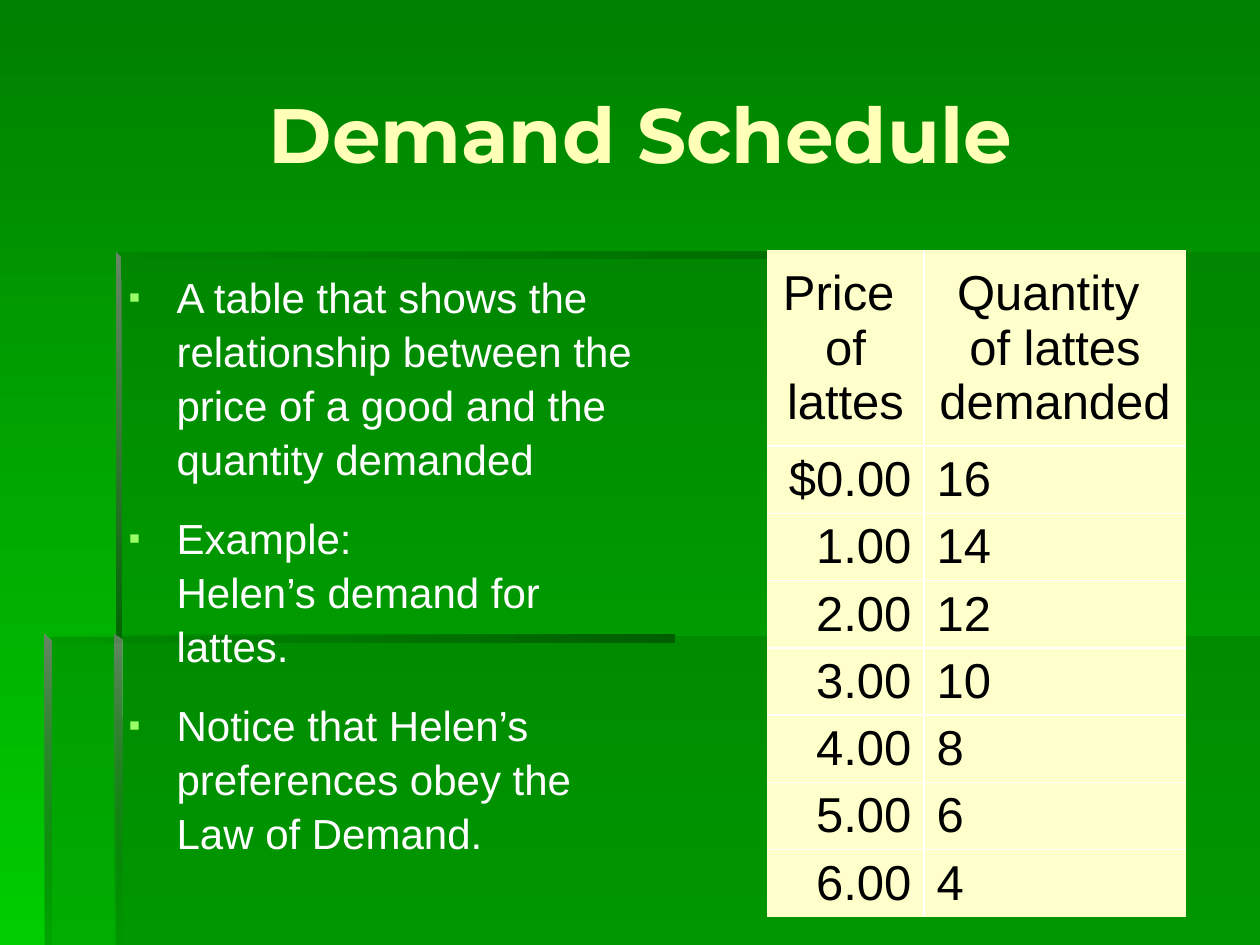
import pptx
import pptx.util
import pptx.dml.color
import pptx.enum.text
import pptx.oxml
import pptx.oxml.ns
import lxml.etree

THEME = {
    "background": ("008000", "00CC00"),
    "panel": "006600", "bar_end": "005E00", "edge": "668666",
    "title": "FFFFB7", "body": "FFFFFF", "bullet": "99FF66",
    "cell": "FFFFCC", "cell_text": "000000", "grid": "FFFFFF",
    "title_font": "Montserrat", "font": "Arial",
    "title_size": 44, "body_size": 24, "cell_size": 28,
}
PX = 914400 / 126
ALIGN = pptx.enum.text.PP_ALIGN
MIDDLE = pptx.enum.text.MSO_ANCHOR.MIDDLE
rgb = pptx.dml.color.RGBColor.from_string
qn = pptx.oxml.ns.qn


def paint_gradient(fill, colours, clockwise):
    fill.gradient()
    fill.gradient_angle = (360 - clockwise) % 360
    for stop, colour in zip(fill.gradient_stops, colours):
        stop.color.rgb = rgb(colour)


def style_font(font, name, size, colour, bold=False):
    values = {"name": name, "size": pptx.util.Pt(size), "bold": bold}
    for attribute, value in values.items():
        setattr(font, attribute, value)
    font.color.rgb = rgb(colour)


deck = pptx.Presentation()
deck.slide_width, deck.slide_height = pptx.util.Inches(10), pptx.util.Inches(7.5)
page = deck.slides.add_slide(deck.slide_layouts[1])
paint_gradient(page.background.fill, THEME["background"], 90)

# Translucent panels and shaded edges: outline, colours, opacities, angle
panel, edge, bar_end = THEME["panel"], THEME["edge"], THEME["bar_end"]
decorations = [
    ([(116, 636), (116, 945), (1260, 945), (1260, 636)], [panel], [30], 0),
    ([(118, 637), (45, 637), (45, 945), (1260, 945), (1260, 252), (118, 252)],
     [panel], [30], 0),
    ([(116, 252), (116, 259), (1123, 259), (1123, 252)],
     [panel, bar_end], [0, 100], 0),
    ([(116, 252), (116, 643), (122, 643), (121, 257)],
     [edge, panel], [100, 100], 90),
    ([(115, 945), (122, 945), (121, 640), (115, 635)],
     [edge, panel], [100, 0], 90),
    ([(44, 635), (44, 642), (674, 642), (674, 635)],
     [panel, bar_end], [0, 100], 0),
    ([(44, 635), (44, 945), (51, 945), (51, 642)],
     [edge, panel], [100, 10], 90),
]
for points, colours, opacities, angle in decorations:
    builder = page.shapes.build_freeform(*points[0], scale=PX)
    builder.add_line_segments(points[1:], close=True)
    shape = builder.convert_to_shape()
    shape.shadow.inherit = False
    shape.line.fill.background()
    if len(colours) == 1:
        shape.fill.solid()
        shape.fill.fore_color.rgb = rgb(colours[0])
    else:
        paint_gradient(shape.fill, colours, angle)
    for colour, opacity in zip(shape._element.spPr.iter(qn("a:srgbClr")), opacities):
        lxml.etree.SubElement(colour, qn("a:alpha"), val=str(opacity * 1000))

# Title and body placeholders, brought in front of the panels
title, body = page.shapes.title, page.placeholders[1]
places = [(title, (63, 34, 1155, 198)), (body, (116, 262, 542, 577))]
for box, place in places:
    for attribute, value in zip(("left", "top", "width", "height"), place):
        setattr(box, attribute, round(value * PX))
    box.text_frame.word_wrap = True
    box.text_frame.auto_size = pptx.enum.text.MSO_AUTO_SIZE.NONE
    page.shapes._spTree.append(box._element)

title.text_frame.text = "Demand Schedule"
title.text_frame.vertical_anchor = MIDDLE
para = title.text_frame.paragraphs[0]
para.alignment = ALIGN.CENTER
style_font(para.runs[0].font, THEME["title_font"], THEME["title_size"],
           THEME["title"], bold=True)

# Bulleted list
body.text_frame.text = "\n".join([
    "A table that shows the relationship between the price of a good "
    "and the quantity demanded",
    "Example:\vHelen’s demand for lattes.",
    "Notice that Helen’s preferences obey the \vLaw of Demand.",
])
body.text_frame.vertical_anchor = pptx.enum.text.MSO_ANCHOR.TOP
namespace = pptx.oxml.ns.nsdecls("a")
bullet_parts = [
    f'<a:buClr {namespace}><a:srgbClr val="{THEME["bullet"]}"/></a:buClr>',
    f'<a:buSzPct {namespace} val="80000"/>',
    f'<a:buFont {namespace} typeface="{THEME["font"]}"/>',
    f'<a:buChar {namespace} char="▪"/>',
]
for index, para in enumerate(body.text_frame.paragraphs):
    para.alignment = ALIGN.LEFT
    para.line_spacing = 1.07
    para.space_before = pptx.util.Pt(14.4 if index else 4.8)
    properties = para._p.get_or_add_pPr()
    indent = round(48 * PX)
    properties.set("marL", str(indent))
    properties.set("indent", str(-indent))
    for part in bullet_parts:
        properties.append(pptx.oxml.parse_xml(part))
    for span in para.runs:
        style_font(span.font, THEME["font"], THEME["body_size"], THEME["body"])

# Demand schedule table
rows = [("Price \vof lattes", "Quantity \vof lattes demanded")]
for step in range(7):
    rows.append((f"{'' if step else '$'}{step}.00", str(16 - 2 * step)))
column_widths = (157, 262)
row_heights = [196] + [67] * 7
table = page.shapes.add_table(
    len(rows), 2, round(767 * PX), round(250 * PX),
    round(sum(column_widths) * PX), round(sum(row_heights) * PX)).table
for column, width in zip(table.columns, column_widths):
    column.width = round(width * PX)
for row_index, (values, height) in enumerate(zip(rows, row_heights)):
    table.rows[row_index].height = round(height * PX)
    for column_index, value in enumerate(values):
        cell = table.cell(row_index, column_index)
        cell.text = value
        cell.vertical_anchor = MIDDLE
        para = cell.text_frame.paragraphs[0]
        if row_index == 0:
            para.alignment = ALIGN.CENTER
        else:
            para.alignment = (ALIGN.RIGHT, ALIGN.LEFT)[column_index]
        for span in para.runs:
            style_font(span.font, THEME["font"], THEME["cell_size"],
                       THEME["cell_text"])
        # Inner grid lines only; the schema puts borders before the fill
        inner = {"lnL": column_index > 0, "lnR": column_index < 1,
                 "lnT": row_index > 0, "lnB": row_index < len(rows) - 1}
        for side, shown in inner.items():
            line = (f'<a:solidFill><a:srgbClr val="{THEME["grid"]}"/></a:solidFill>'
                    if shown else "<a:noFill/>")
            cell._tc.get_or_add_tcPr().append(pptx.oxml.parse_xml(
                f'<a:{side} {namespace} w="12700">{line}</a:{side}>'))
        cell.fill.solid()
        cell.fill.fore_color.rgb = rgb(THEME["cell"])

deck.save("out.pptx")
